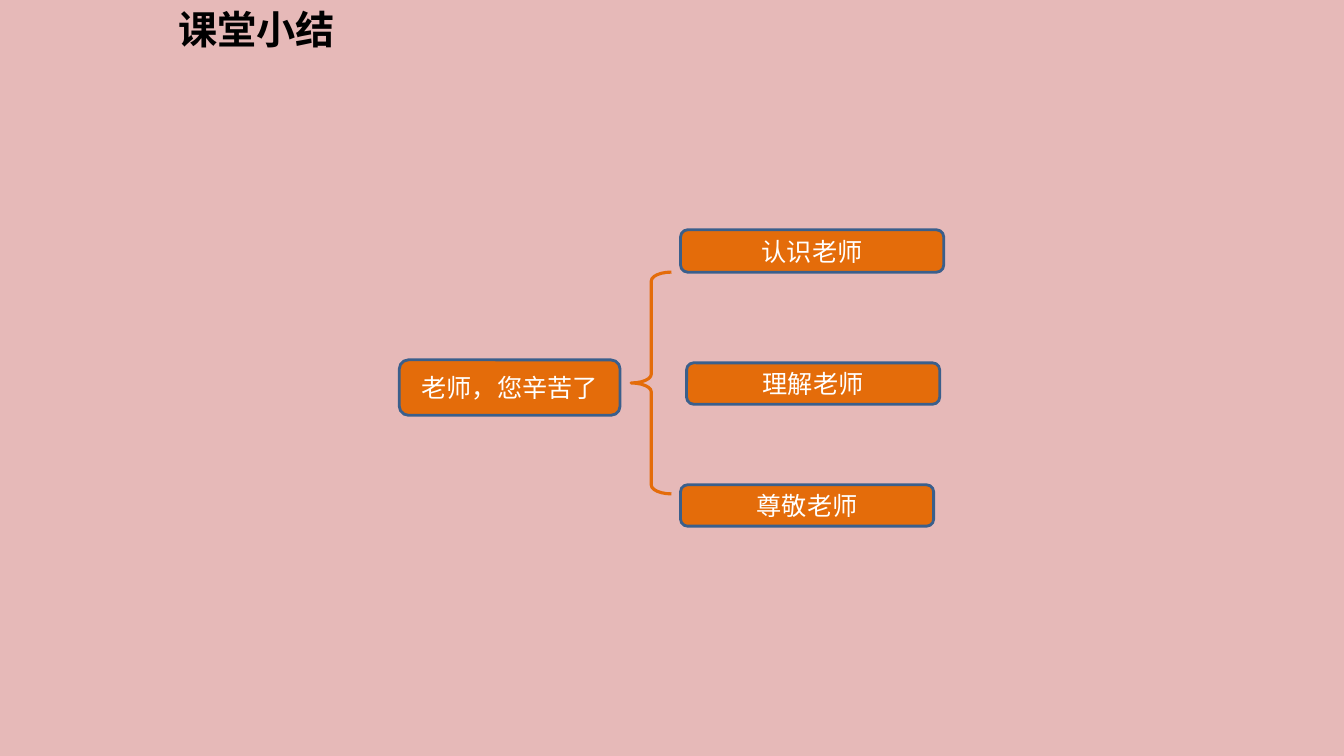
from dataclasses import dataclass

from lxml.etree import SubElement
from pptx import Presentation
from pptx.dml.color import RGBColor
from pptx.enum.shapes import MSO_SHAPE
from pptx.enum.text import MSO_ANCHOR, MSO_AUTO_SIZE, PP_ALIGN
from pptx.oxml.ns import qn
from pptx.shapes.autoshape import Shape
from pptx.slide import Slide
from pptx.util import Emu, Pt

EMU_PER_PX = 9144  # 100 px to the inch
FONT = "Noto Sans CJK SC"
BACKGROUND = "E6B9B8"
ORANGE = "E46C0A"
BORDER = "3A5F8C"
WHITE = "FFFFFF"
BLACK = "000000"


@dataclass(frozen=True)
class Box:
    left: int
    top: int
    width: int
    height: int


@dataclass(frozen=True)
class Topic:
    text: str
    box: Box


TITLE_BOX = Box(167, 0, 187, 57)
BRACE_BOX = Box(626, 270, 40, 220)
TOPICS = [
    Topic("老师，您辛苦了", Box(396, 357, 219, 55)),
    Topic("认识老师", Box(675, 228, 261, 42)),
    Topic("理解老师", Box(681, 360, 251, 41)),
    Topic("尊敬老师", Box(675, 481, 251, 41)),
]


def px(length: int) -> Emu:
    return Emu(length * EMU_PER_PX)


def color(value: str) -> RGBColor:
    return RGBColor.from_string(value)


def set_text(shape: Shape, text: str, size: int, text_color: str,
             alignment: PP_ALIGN, anchor: MSO_ANCHOR, bold: bool = False) -> None:
    frame = shape.text_frame
    frame.text = text
    frame.word_wrap = True
    frame.auto_size = MSO_AUTO_SIZE.NONE
    frame.vertical_anchor = anchor
    paragraph = frame.paragraphs[0]
    paragraph.alignment = alignment
    font = paragraph.runs[0].font
    font.size = Pt(size)
    font.bold = bold
    font.color.rgb = color(text_color)
    font.name = FONT
    properties = paragraph.runs[0]._r.get_or_add_rPr()
    SubElement(properties, qn("a:ea"), typeface=FONT)


def add_outlined_shape(slide: Slide, kind: MSO_SHAPE, box: Box,
                       line_color: str, line_width: float) -> Shape:
    shape = slide.shapes.add_shape(
        kind, px(box.left), px(box.top), px(box.width), px(box.height))
    shape.shadow.inherit = False
    shape.line.color.rgb = color(line_color)
    shape.line.width = Pt(line_width)
    return shape


def add_title(slide: Slide) -> None:
    title = slide.shapes.title
    title.left, title.top = px(TITLE_BOX.left), px(TITLE_BOX.top)
    title.width, title.height = px(TITLE_BOX.width), px(TITLE_BOX.height)
    set_text(title, "课堂小结", 28, BLACK, PP_ALIGN.LEFT, MSO_ANCHOR.TOP, bold=True)


def add_topic(slide: Slide, topic: Topic) -> None:
    shape = add_outlined_shape(
        slide, MSO_SHAPE.ROUNDED_RECTANGLE, topic.box, BORDER, 2)
    shape.fill.solid()
    shape.fill.fore_color.rgb = color(ORANGE)
    frame = shape.text_frame
    frame.margin_left = frame.margin_right = px(7)
    frame.margin_top = frame.margin_bottom = px(4)
    set_text(shape, topic.text, 18, WHITE, PP_ALIGN.CENTER, MSO_ANCHOR.MIDDLE)


def add_brace(slide: Slide) -> None:
    brace = add_outlined_shape(slide, MSO_SHAPE.LEFT_BRACE, BRACE_BOX, ORANGE, 2.25)
    brace.fill.background()
    brace.adjustments[0] = 0.22
    brace.adjustments[1] = 0.5


def main() -> None:
    presentation = Presentation()
    presentation.slide_width, presentation.slide_height = px(1333), px(750)
    title_only = presentation.slide_layouts.get_by_name("Title Only")
    slide = presentation.slides.add_slide(title_only)
    slide.background.fill.solid()
    slide.background.fill.fore_color.rgb = color(BACKGROUND)
    add_title(slide)
    for topic in TOPICS:
        add_topic(slide, topic)
    add_brace(slide)
    presentation.save("out.pptx")


if __name__ == "__main__":
    main()
